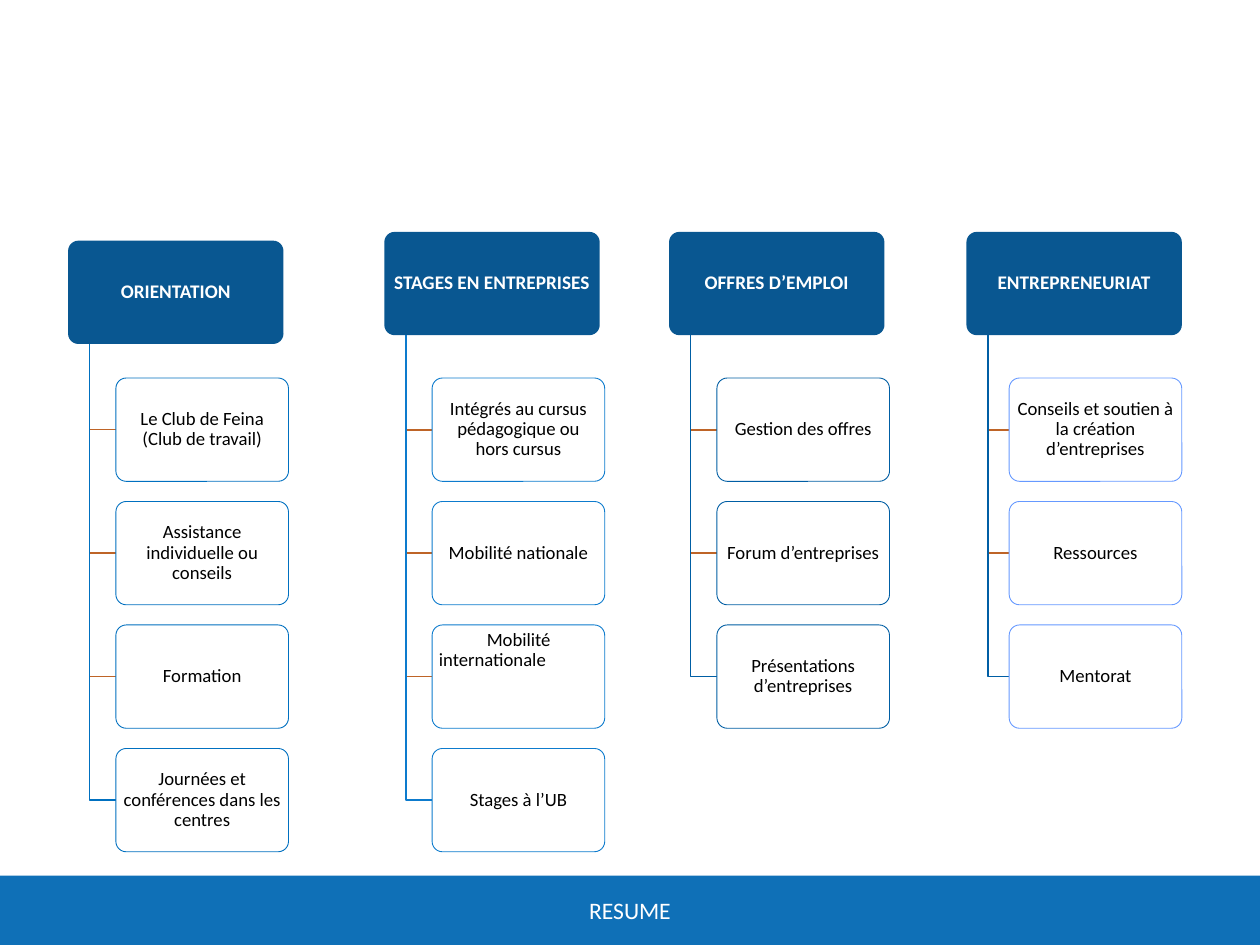
from typing import NamedTuple

from pptx import Presentation
from pptx.dml.color import RGBColor
from pptx.enum.shapes import MSO_SHAPE
from pptx.enum.text import MSO_ANCHOR, PP_ALIGN
from pptx.util import Inches, Pt

SLIDE_W, SLIDE_H = 10, 7.5
FONT = "Calibri"
COLOURS = {
    "white": "FFFFFF", "black": "000000", "footer": "0F70B7",
    "header": "095791", "branch": "BE6427", "navy": "005EA4",
    "blue": "0070C0", "azure": "0D7BCD", "lilac": "6699FF",
}

# Grid, in inches
BOX_H = 0.82
HEADER_W, ITEM_W = 1.71, 1.37
FIRST_ROW, ROW_PITCH = 3.0, 0.98
SPINE_INDENT = 0.17
FOOTER_H = 0.55


class Service(NamedTuple):
    heading: str
    left: float
    top: float
    item_indent: float
    border: str
    spine: str
    items: tuple


SERVICES = (
    Service("OFFRES D’EMPLOI", 5.31, 1.84, 0.38, "navy", "navy",
            ("Gestion des offres", "Forum d’entreprises",
             "Présentations d’entreprises")),
    Service("ORIENTATION", 0.54, 1.91, 0.38, "blue", "blue",
            ("Le Club de Feina (Club de travail)",
             "Assistance individuelle ou conseils", "Formation",
             "Journées et conférences dans les centres")),
    Service("STAGES EN ENTREPRISES", 3.05, 1.84, 0.38, "azure", "azure",
            ("Intégrés au cursus pédagogique ou hors cursus",
             "Mobilité nationale", "Mobilité internationale",
             "Stages à l’UB")),
    Service("ENTREPRENEURIAT", 7.67, 1.84, 0.34, "lilac", "navy",
            ("Conseils et soutien à la création d’entreprises",
             "Ressources", "Mentorat")),
)
TOP_ALIGNED_ITEM = "Mobilité internationale"


def colour(name):
    return RGBColor.from_string(COLOURS[name])


def write(frame, text, size, ink, bold=False):
    """Put one centred run in a text frame."""
    frame.word_wrap = True
    frame.vertical_anchor = MSO_ANCHOR.MIDDLE
    paragraph = frame.paragraphs[0]
    paragraph.alignment = PP_ALIGN.CENTER
    run = paragraph.add_run()
    run.text = text
    run.font.name = FONT
    run.font.size = Pt(size)
    run.font.bold = bold
    run.font.color.rgb = colour(ink)
    return paragraph


def add_box(slide, left, top, width, fill, border=None):
    """Add a rounded box of the common height."""
    box = slide.shapes.add_shape(
        MSO_SHAPE.ROUNDED_RECTANGLE,
        Inches(left), Inches(top), Inches(width), Inches(BOX_H))
    box.adjustments[0] = 0.1
    box.shadow.inherit = False
    box.fill.solid()
    box.fill.fore_color.rgb = colour(fill)
    if border:
        box.line.color.rgb = colour(border)
        box.line.width = Pt(0.5)
    else:
        box.line.fill.background()
    frame = box.text_frame
    frame.margin_left = frame.margin_right = Inches(0.03)
    frame.margin_top = frame.margin_bottom = Inches(0.02)
    return box


def add_elbow(slide, spine_x, start_y, end_x, end_y, ink):
    """Add a line down the spine that turns right to an item."""
    builder = slide.shapes.build_freeform(Inches(spine_x), Inches(start_y))
    builder.add_line_segments(
        [(Inches(spine_x), Inches(end_y)), (Inches(end_x), Inches(end_y))],
        close=False)
    elbow = builder.convert_to_shape()
    elbow.shadow.inherit = False
    elbow.fill.background()
    elbow.line.color.rgb = colour(ink)
    elbow.line.width = Pt(1)


def add_service(slide, service):
    """Add a heading with its column of items."""
    header = add_box(slide, service.left, service.top, HEADER_W, "header")
    write(header.text_frame, service.heading, 11, "white",
          bold=True).line_spacing = 0.9

    item_left = service.left + service.item_indent
    for row, text in enumerate(service.items):
        item_top = FIRST_ROW + row * ROW_PITCH
        is_last = row == len(service.items) - 1
        add_elbow(slide, service.left + SPINE_INDENT, service.top + BOX_H,
                  item_left, item_top + BOX_H / 2,
                  service.spine if is_last else "branch")
        item = add_box(slide, item_left, item_top, ITEM_W, "white",
                       service.border)
        paragraph = write(item.text_frame, text, 10.7, "black")
        paragraph.line_spacing = 0.9
        if text == TOP_ALIGNED_ITEM:
            # Left-aligned at the top, with the first line indented
            item.text_frame.vertical_anchor = MSO_ANCHOR.TOP
            paragraph.alignment = PP_ALIGN.LEFT
            paragraph._p.get_or_add_pPr().set("indent", str(Inches(0.38)))


def add_footer_title(slide):
    """Turn the title into the band at the foot of the slide."""
    title = slide.shapes.title
    title.left, title.top = 0, Inches(SLIDE_H - FOOTER_H)
    title.width, title.height = Inches(SLIDE_W), Inches(FOOTER_H)
    title.fill.solid()
    title.fill.fore_color.rgb = colour("footer")
    write(title.text_frame, "RESUME", 13.5, "white")


def main():
    deck = Presentation()
    deck.slide_width, deck.slide_height = Inches(SLIDE_W), Inches(SLIDE_H)
    slide = deck.slides.add_slide(deck.slide_layouts.get_by_name("Title Only"))
    add_footer_title(slide)
    for service in SERVICES:
        add_service(slide, service)
    deck.save("out.pptx")


if __name__ == "__main__":
    main()
